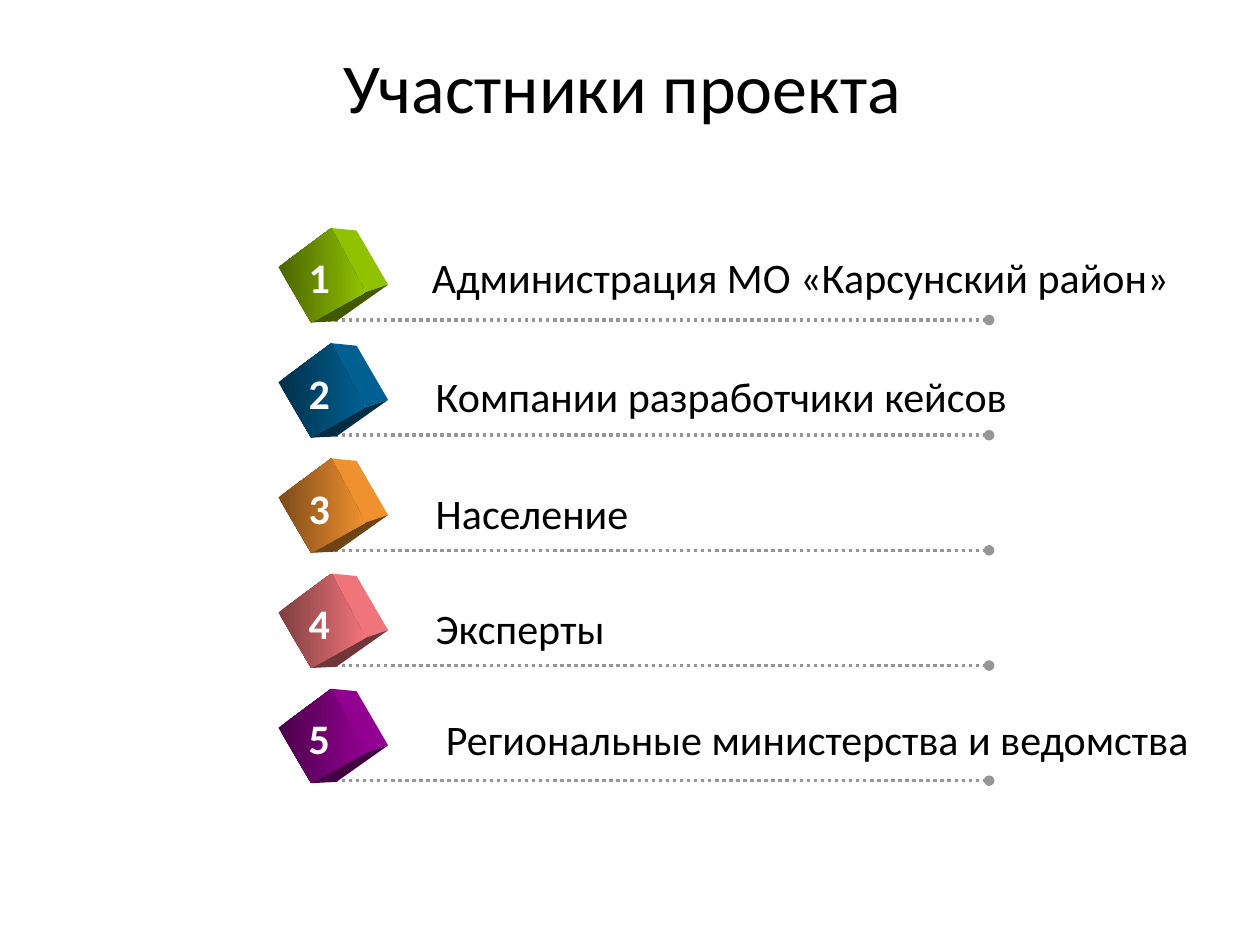
"""Build the slide that lists the five groups taking part in the project."""
from lxml import etree
from pptx import Presentation
from pptx import util as u
from pptx.dml.color import RGBColor
from pptx.enum import dml, shapes, text
from pptx.oxml.ns import qn

HUES = {"ink": "000000", "white": "FFFFFF", "rule": "969696"}
ROWS = [
    ("Администрация МО «Карсунский район»", 3.33, 1.95, 6.11, ("4A6300", "91C200", "435900")),
    ("Компании разработчики кейсов", 3.36, 2.89, 4.78, ("00314A", "006092", "002D44")),
    ("Население", 3.36, 3.82, 1.75, ("7D4A18", "F0912F", "704316")),
    ("Эксперты", 3.36, 4.73, 1.56, ("7D3D3F", "F0757A", "703638")),
    ("Региональные министерства и ведомства", 3.44, 5.61, 6.16, ("4A004A", "910091", "430043")),
]
FIRST, PITCH = 1.81, 0.914
LEFT, RIGHT = 2.6, 7.85
FACE = [(2.21, 0.31), (2.63, 0), (2.9, 0.51), (2.47, 0.75)]
SIDE = [FACE[1], (2.83, 0.02), (3.08, 0.45), FACE[2]]
BASE = [FACE[3], FACE[2], SIDE[2], (2.67, 0.74)]


def write(frame, words, size, hue, bold=False):
    para = frame.paragraphs[0]
    run = para.add_run()
    run.text = words
    run.font.name, run.font.size, run.font.bold = "Calibri", u.Pt(size), bold
    run.font.color.rgb = RGBColor.from_string(HUES[hue])
    return para


def label(group, words, left, top, wide, hue, bold=False):
    box = group.shapes.add_textbox(*map(u.Inches, (left, top, wide, 0.5)))
    box.text_frame.word_wrap = False
    box.text_frame.auto_size = text.MSO_AUTO_SIZE.SHAPE_TO_FIT_TEXT
    write(box.text_frame, words, 24, hue, bold)


deck = Presentation()
deck.slide_width, deck.slide_height = u.Inches(10), u.Inches(7.5)
slide = deck.slides.add_slide(deck.slide_layouts[5])

title = slide.shapes.title
title.left, title.top, title.width, title.height = map(u.Inches, (0.69, 0.18, 8.62, 1.09))
title.text_frame.vertical_anchor = text.MSO_ANCHOR.MIDDLE
head = write(title.text_frame, "Участники проекта ", 40, "ink")
head.alignment, head.line_spacing = text.PP_ALIGN.CENTER, 0.9

for i, (words, left, top, wide, (dark, light, deep)) in enumerate(ROWS):
    group = slide.shapes.add_group_shape()
    y = FIRST + i * PITCH

    rule = group.shapes.add_connector(
        shapes.MSO_CONNECTOR.STRAIGHT,
        *map(u.Inches, (LEFT, y + 0.73, RIGHT, y + 0.73)))
    rule.line.color.rgb = RGBColor.from_string(HUES["rule"])
    rule.line.width = u.Pt(2)
    rule.line.dash_style = dml.MSO_LINE.ROUND_DOT
    etree.SubElement(rule.line._get_or_add_ln(), qn("a:tailEnd"), type="oval")
    etree.SubElement(rule._element.spPr, qn("a:effectLst"))

    for points, hue in ((SIDE, light), (BASE, deep), (FACE, None)):
        spots = [(u.Inches(x), u.Inches(y + down)) for x, down in points]
        pen = group.shapes.build_freeform(*spots[0])
        pen.add_line_segments(spots[1:], close=True)
        plane = pen.convert_to_shape()
        plane.shadow.inherit = False
        plane.line.fill.background()
        if hue:
            plane.fill.solid()
            plane.fill.fore_color.rgb = RGBColor.from_string(hue)
        else:
            plane.fill.gradient()
            plane.fill.gradient_angle = 0
            for stop, tint in zip(plane.fill.gradient_stops, (dark, light)):
                stop.color.rgb = RGBColor.from_string(tint)

    label(group, words, left, top, wide, "ink")
    label(group, str(i + 1), 2.35, y + 0.14, 0.39, "white", True)

deck.save("out.pptx")
